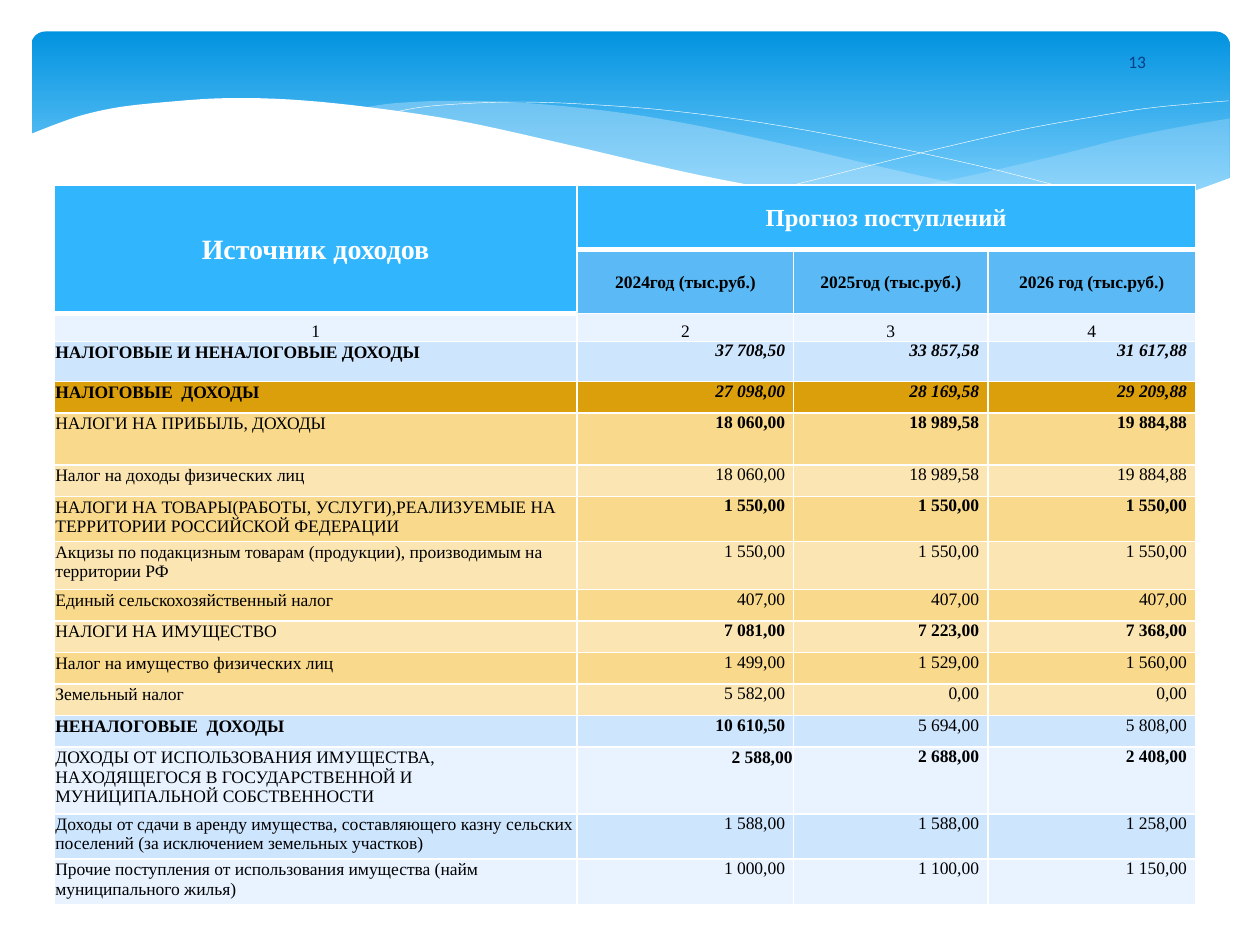
from lxml import etree
from pptx import Presentation
from pptx.dml.color import RGBColor
from pptx.enum.shapes import MSO_SHAPE
from pptx.enum.text import MSO_ANCHOR, PP_ALIGN
from pptx.oxml.ns import qn
from pptx.util import Inches, Pt

WHITE = RGBColor(0xFF, 0xFF, 0xFF)
BLACK = RGBColor(0x00, 0x00, 0x00)
BAND_TOP = RGBColor(0x02, 0x93, 0xE0)
BAND_BOTTOM = RGBColor(0x83, 0xD3, 0xFE)
WAVE = RGBColor(0xC6, 0xE7, 0xFC)
NAVY = RGBColor(0x07, 0x3E, 0x87)
HEADER = RGBColor(0x31, 0xB6, 0xFD)
YEAR = RGBColor(0x5B, 0xBA, 0xF6)
BLUE = RGBColor(0xCE, 0xE5, 0xFE)
PALE_BLUE = RGBColor(0xE8, 0xF3, 0xFF)
GOLD = RGBColor(0xDC, 0x9F, 0x0C)
SAND = RGBColor(0xF9, 0xD9, 0x8C)
PALE_SAND = RGBColor(0xFB, 0xE6, 0xB3)

FONT = "Times New Roman"
COLUMN_WIDTHS = [4.15, 1.72, 1.54, 1.65]
HEADER_HEIGHTS = [0.51, 0.51, 0.22]
YEARS = ["2024год (тыс.руб.)", "2025год (тыс.руб.)", "2026 год (тыс.руб.)"]

# Height, fill, source, label style, amounts, style of each amount (b bold, i italic)
INCOME = [
    (0.32, BLUE, "НАЛОГОВЫЕ И НЕНАЛОГОВЫЕ ДОХОДЫ", "b",
     ["37 708,50", "33 857,58", "31 617,88"], ["bi"] * 3),
    (0.25, GOLD, "НАЛОГОВЫЕ  ДОХОДЫ", "b",
     ["27 098,00", "28 169,58", "29 209,88"], ["bi"] * 3),
    (0.41, SAND, "НАЛОГИ НА ПРИБЫЛЬ, ДОХОДЫ", "",
     ["18 060,00", "18 989,58", "19 884,88"], ["b"] * 3),
    (0.25, PALE_SAND, "Налог на доходы физических лиц", "",
     ["18 060,00", "18 989,58", "19 884,88"], [""] * 3),
    (0.36, SAND, "НАЛОГИ НА ТОВАРЫ(РАБОТЫ, УСЛУГИ),РЕАЛИЗУЕМЫЕ НА "
     "ТЕРРИТОРИИ РОССИЙСКОЙ ФЕДЕРАЦИИ", "", ["1 550,00"] * 3, ["b"] * 3),
    (0.38, PALE_SAND, "Акцизы по подакцизным товарам (продукции), производимым на "
     "территории РФ", "", ["1 550,00"] * 3, [""] * 3),
    (0.25, SAND, "Единый сельскохозяйственный налог", "", ["407,00"] * 3, [""] * 3),
    (0.25, PALE_SAND, "НАЛОГИ НА ИМУЩЕСТВО", "",
     ["7 081,00", "7 223,00", "7 368,00"], ["b"] * 3),
    (0.25, SAND, "Налог на имущество физических лиц", "",
     ["1 499,00", "1 529,00", "1 560,00"], [""] * 3),
    (0.25, PALE_SAND, "Земельный налог", "", ["5 582,00", "0,00", "0,00"], [""] * 3),
    (0.25, BLUE, "НЕНАЛОГОВЫЕ  ДОХОДЫ", "b",
     ["10 610,50", "5 694,00", "5 808,00"], ["b", "", ""]),
    (0.53, PALE_BLUE, "ДОХОДЫ ОТ ИСПОЛЬЗОВАНИЯ ИМУЩЕСТВА, НАХОДЯЩЕГОСЯ В "
     "ГОСУДАРСТВЕННОЙ И МУНИЦИПАЛЬНОЙ СОБСТВЕННОСТИ", "",
     ["2 588,00", "2 688,00", "2 408,00"], ["b"] * 3),
    (0.36, BLUE, "Доходы от сдачи в аренду имущества, составляющего казну сельских "
     "поселений (за исключением земельных участков)", "",
     ["1 588,00", "1 588,00", "1 258,00"], [""] * 3),
    (0.36, PALE_BLUE, "Прочие поступления от использования имущества (найм "
     "муниципального жилья)", "", ["1 000,00", "1 100,00", "1 150,00"], [""] * 3),
]

# Waves: each outline is a list of smooth edges; fill opacity in percent, None for a line
WAVES = [
    (29, [[(9.76, 0.94), (9.35, 1.01), (8.91, 1.1), (8.32, 1.25), (7.53, 1.43), (6.61, 1.6)],
          [(6.61, 1.6), (7.05, 1.65), (7.57, 1.7), (8.14, 1.72), (8.63, 1.7),
           (9.05, 1.63), (9.42, 1.54), (9.76, 1.41)]]),
    (40, [[(8.93, 1.67), (8.37, 1.59), (7.75, 1.49), (7.06, 1.34), (6.29, 1.16),
           (5.55, 1), (4.89, 0.89), (4.2, 0.82), (3.61, 0.8), (3.13, 0.82), (2.86, 0.86)],
          [(2.86, 0.86), (3.42, 0.94), (4.04, 1.06), (4.91, 1.26), (5.66, 1.43),
           (6.34, 1.56), (6.95, 1.65), (7.61, 1.71), (8.18, 1.73), (8.57, 1.71), (8.93, 1.67)]]),
    (None, [[(3.09, 0.9), (3.35, 0.85), (3.74, 0.82), (4.16, 0.81), (4.69, 0.83),
             (5.33, 0.88), (6.08, 0.98), (6.95, 1.14), (7.95, 1.36), (9.07, 1.66)]]),
    (None, [[(6.13, 1.51), (6.53, 1.41), (7.2, 1.24), (8.06, 1.04), (8.66, 0.93),
             (9.1, 0.86), (9.51, 0.82), (9.75, 0.8)]]),
    (100, [[(9.77, 1.41), (9.4, 1.54), (8.99, 1.64), (8.5, 1.7), (7.93, 1.71),
            (7.26, 1.67), (6.48, 1.56), (5.55, 1.39), (4.47, 1.14), (3.65, 0.96),
            (2.92, 0.85), (2.3, 0.79), (1.77, 0.78), (1.32, 0.81), (0.95, 0.85),
            (0.67, 0.91), (0.46, 0.98), (0.23, 1.07)],
           [(0.23, 2.24), (9.77, 2.24)]]),
]


def smooth(points, steps=5):
    """Catmull-Rom curve through the points."""
    curve = [points[0]]
    padded = [points[0], *points, points[-1]]
    for a, b, c, d in zip(padded, padded[1:], padded[2:], padded[3:]):
        for step in range(1, steps + 1):
            t = step / steps
            curve.append(tuple(
                b[i] + 0.5 * t * (c[i] - a[i]
                                  + t * (2 * a[i] - 5 * b[i] + 4 * c[i] - d[i]
                                         + t * (3 * (b[i] - c[i]) + d[i] - a[i])))
                for i in (0, 1)))
    return curve


def add_wave(slide, opacity, edges):
    points = [(Inches(x), Inches(y)) for edge in edges for x, y in smooth(edge)]
    builder = slide.shapes.build_freeform(*points[0], scale=1.0)
    builder.add_line_segments(points[1:], close=opacity is not None)
    shape = builder.convert_to_shape()
    shape.shadow.inherit = False
    if opacity is None:
        shape.fill.background()
        shape.line.color.rgb = WHITE
        shape.line.width = Pt(0.25)
        return
    shape.line.fill.background()
    shape.fill.solid()
    shape.fill.fore_color.rgb = WHITE if opacity == 100 else WAVE
    if opacity < 100:
        color = shape.fill._xPr.find(qn("a:solidFill"))[0]
        etree.SubElement(color, qn("a:alpha"), val=str(opacity * 1000))


def set_borders(cell, bottom):
    properties = cell._tc.get_or_add_tcPr()
    for index, (side, width) in enumerate([("L", 1), ("R", 1), ("T", 1), ("B", bottom)]):
        line = etree.Element(qn(f"a:ln{side}"), w=str(Pt(width)))
        fill = etree.SubElement(line, qn("a:solidFill"))
        etree.SubElement(fill, qn("a:srgbClr"), val=str(WHITE))
        properties.insert(index, line)


def fill_cell(cell, text, fill, style="", size=10, color=BLACK, align=PP_ALIGN.CENTER,
              anchor=MSO_ANCHOR.MIDDLE, wide=False, bottom=1):
    side, top = (0.07, 0) if wide else (0.01, 0.01)
    cell.margin_left = cell.margin_right = Inches(side)
    cell.margin_top, cell.margin_bottom = Inches(top), 0
    cell.vertical_anchor = anchor
    cell.fill.solid()
    cell.fill.fore_color.rgb = fill
    set_borders(cell, bottom)
    paragraph = cell.text_frame.paragraphs[0]
    paragraph.text = text
    paragraph.alignment = align
    font = paragraph.runs[0].font if text else paragraph.font
    font.name, font.size, font.color.rgb = FONT, Pt(size), color
    font.bold, font.italic = "b" in style, "i" in style


presentation = Presentation()
presentation.slide_width, presentation.slide_height = Inches(10), Inches(7.5)
slide = presentation.slides.add_slide(presentation.slide_layouts[6])

# Gradient band with waves
band = slide.shapes.add_shape(MSO_SHAPE.ROUNDED_RECTANGLE, Inches(0.25), Inches(0.25),
                              Inches(9.51), Inches(1.56))
band.adjustments[0] = 0.07
band.shadow.inherit = False
band.line.fill.background()
band.fill.gradient()
band.fill.gradient_angle = 270
for stop, position, color in zip(band.fill.gradient_stops, (0, 0.9), (BAND_TOP, BAND_BOTTOM)):
    stop.position = position
    stop.color.rgb = color
for opacity, edges in WAVES:
    add_wave(slide, opacity, edges)

# Income table
heights = HEADER_HEIGHTS + [row[0] for row in INCOME]
table = slide.shapes.add_table(len(heights), len(COLUMN_WIDTHS), Inches(0.43), Inches(1.47),
                               Inches(sum(COLUMN_WIDTHS)), Inches(sum(heights))).table
for column, width in zip(table.columns, COLUMN_WIDTHS):
    column.width = Inches(width)
for row, height in zip(table.rows, heights):
    row.height = Inches(height)

# Header rows
table.cell(0, 0).merge(table.cell(1, 0))
table.cell(0, 1).merge(table.cell(0, 3))
titles = [(0, 0, "Источник доходов", 16), (0, 1, "Прогноз поступлений", 14),
          (0, 2, "", 14), (0, 3, "", 14), (1, 0, "", 16)]
for row, column, title, size in titles:
    fill_cell(table.cell(row, column), title, HEADER, "b", size, WHITE, bottom=3)
for column, year in enumerate(YEARS, start=1):
    fill_cell(table.cell(1, column), year, YEAR, "b")
for column in range(len(COLUMN_WIDTHS)):
    fill_cell(table.cell(2, column), str(column + 1), PALE_BLUE, anchor=MSO_ANCHOR.BOTTOM)

# Income rows
for row, (_, fill, source, label_style, amounts, styles) in enumerate(INCOME, start=3):
    fill_cell(table.cell(row, 0), source, fill, label_style, align=PP_ALIGN.LEFT,
              anchor=MSO_ANCHOR.TOP)
    for column, (amount, style) in enumerate(zip(amounts, styles), start=1):
        fill_cell(table.cell(row, column), amount, fill, style, align=PP_ALIGN.RIGHT,
                  anchor=MSO_ANCHOR.TOP, wide=(row, column) != (14, 1))

# Slide number
number = slide.shapes.add_textbox(Inches(8.39), Inches(0.29), Inches(1.27), Inches(0.4))
number.text_frame.word_wrap = True
number.text_frame.vertical_anchor = MSO_ANCHOR.MIDDLE
paragraph = number.text_frame.paragraphs[0]
paragraph.text = "13"
paragraph.alignment = PP_ALIGN.CENTER
font = paragraph.runs[0].font
font.name, font.size, font.color.rgb = "Calibri", Pt(10), NAVY

presentation.save("out.pptx")
